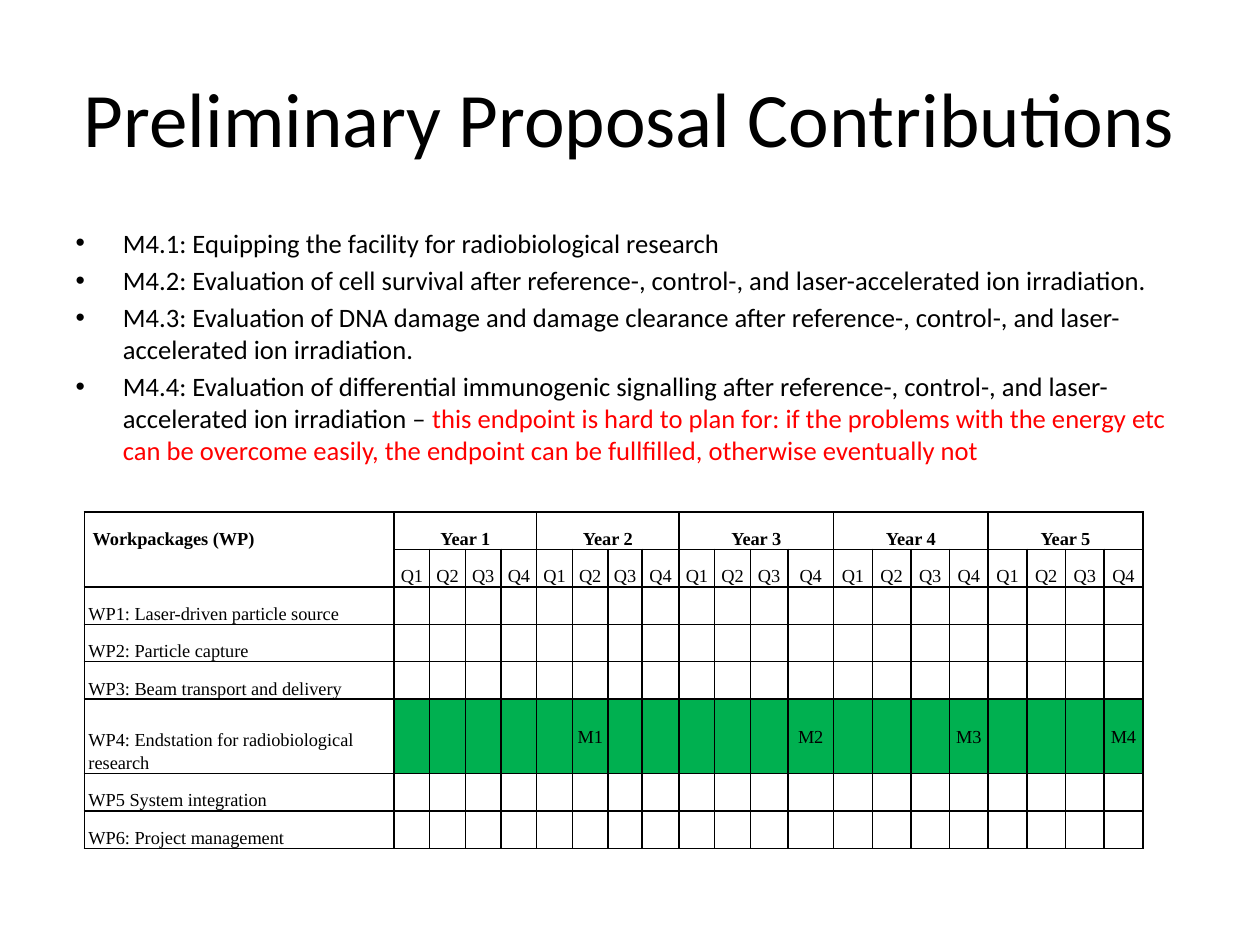
import dataclasses

import pptx
import pptx.dml.color
import pptx.enum.text
import pptx.oxml
import pptx.oxml.ns
import pptx.util
from pptx.util import Pt

Align = pptx.enum.text.PP_ALIGN
Anchor = pptx.enum.text.MSO_ANCHOR


@dataclasses.dataclass(frozen=True)
class Theme:
    """Colours, fonts and type sizes of the slide."""
    ink: str = "000000"
    warning: str = "FF0000"
    active: str = "00B050"
    text_font: str = "Calibri"
    plan_font: str = "Times New Roman"
    title_size: float = 44
    list_size: float = 15.2
    plan_size: float = 10.5
    rule_width: float = 1


THEME = Theme()

MILESTONES = [
    ["M4.1: Equipping the facility for radiobiological research"],
    ["M4.2: Evaluation of cell survival after reference-, control-, and "
     "laser-accelerated ion irradiation."],
    ["M4.3: Evaluation of DNA damage and damage clearance after reference-, control-, "
     "and laser-accelerated ion irradiation."],
    ["M4.4: Evaluation of differential immunogenic signalling after reference-, control-, "
     "and laser-accelerated ion irradiation – ",
     "this endpoint is hard to plan for: if the problems with the energy etc can be overcome "
     "easily, the endpoint can be fullfilled, otherwise eventually not"],
]
WORKPACKAGES = [
    "WP1: Laser-driven particle source",
    "WP2: Particle capture",
    "WP3: Beam transport and delivery",
    "WP4: Endstation for radiobiological research",
    "WP5 System integration",
    "WP6: Project management",
]
ACTIVE_ROW = 5
MILESTONE_COLUMNS = {6: "M1", 12: "M2", 16: "M3", 20: "M4"}
YEARS = 5
QUARTERS = 4
SPARE_COLUMN = 1 + YEARS * QUARTERS
COLUMN_WIDTHS = ([177] + [20.4] * 6 + [19.4, 21.2] + [20.4, 20.4, 21.4, 26.2]
                 + [22.1] * 8 + [25.8] * 2)
ROW_HEIGHTS = [21.4] * 5 + [42.6] + [21.4] * 2


def style_font(font, face, size, color, bold=False):
    """Set face, size, colour and weight of a font."""
    font.name = face
    font.size = Pt(size)
    font.bold = bold
    font.color.rgb = pptx.dml.color.RGBColor.from_string(color)


def place(part, box):
    """Move a placeholder to a box of left, top, width and height in points."""
    part.left, part.top, part.width, part.height = map(Pt, box)
    part.text_frame.auto_size = pptx.enum.text.MSO_AUTO_SIZE.NONE


def fill_title(title, box):
    """Write the slide title in its box."""
    place(title, box)
    title.text_frame.text = "Preliminary Proposal Contributions"
    title.text_frame.vertical_anchor = Anchor.MIDDLE
    heading = title.text_frame.paragraphs[0]
    heading.alignment = Align.CENTER
    style_font(heading.runs[0].font, THEME.text_font, THEME.title_size, THEME.ink)


def fill_milestones(body, box):
    """Write the milestone list, with the remark in the warning colour."""
    place(body, box)
    body.text_frame.text = "\n".join(parts[0] for parts in MILESTONES)
    for milestone, parts in zip(body.text_frame.paragraphs, MILESTONES):
        for remark in parts[1:]:
            milestone.add_run().text = remark
        for run, color in zip(milestone.runs, (THEME.ink, THEME.warning)):
            style_font(run.font, THEME.text_font, THEME.list_size, color)


def rule_cell(cell, sides):
    """Draw the cell borders named in sides and clear the others."""
    properties = cell._tc.get_or_add_tcPr()
    for side in "LRTB":
        line = pptx.oxml.parse_xml(
            f'<a:ln{side} {pptx.oxml.ns.nsdecls("a")} w="{Pt(THEME.rule_width)}">'
            + (f'<a:solidFill><a:srgbClr val="{THEME.ink}"/></a:solidFill>'
               if side in sides else "<a:noFill/>")
            + f"</a:ln{side}>")
        properties.append(line)


def cell_sides(row, column):
    """Return the sides of a plan cell that carry a border."""
    if column >= SPARE_COLUMN:
        return "L" if column == SPARE_COLUMN else ""
    if column == 0 and row < 2:
        return ("LRT", "LRB")[row]
    return "LRTB"


def cell_text(row, column):
    """Return the wording of a plan cell."""
    if column == 0:
        return [" Workpackages (WP)", "", *WORKPACKAGES][row]
    if column >= SPARE_COLUMN:
        return ""
    year, quarter = divmod(column - 1, QUARTERS)
    if row == 0:
        return f"Year {year + 1}" if quarter == 0 else ""
    if row == 1:
        return f"Q{quarter + 1}"
    return MILESTONE_COLUMNS.get(column, "") if row == ACTIVE_ROW else ""


def fill_cell(cell, row, column):
    """Write, rule and colour one plan cell."""
    scheduled = row == ACTIVE_ROW and 0 < column < SPARE_COLUMN
    cell.margin_left = cell.margin_right = Pt(2.4)
    cell.margin_top = cell.margin_bottom = 0
    cell.vertical_anchor = Anchor.MIDDLE if scheduled else Anchor.BOTTOM
    cell.text_frame.text = cell_text(row, column)
    entry = cell.text_frame.paragraphs[0]
    entry.alignment = Align.CENTER if column else Align.LEFT
    entry.line_spacing = 1.15
    for run in entry.runs:
        style_font(run.font, THEME.plan_font, THEME.plan_size, THEME.ink, row == 0)
    if not entry.runs:
        entry._p.append(pptx.oxml.parse_xml(
            f'<a:endParaRPr {pptx.oxml.ns.nsdecls("a")} sz="{int(THEME.plan_size * 100)}"/>'))
    rule_cell(cell, cell_sides(row, column))
    if scheduled:
        cell.fill.solid()
        cell.fill.fore_color.rgb = pptx.dml.color.RGBColor.from_string(THEME.active)
    else:
        cell.fill.background()


def add_plan(slide, left, top):
    """Add the five-year work plan with its top left corner at the given point."""
    plan = slide.shapes.add_table(
        len(ROW_HEIGHTS), len(COLUMN_WIDTHS), Pt(left), Pt(top),
        Pt(sum(COLUMN_WIDTHS)), Pt(sum(ROW_HEIGHTS))).table
    plan.first_row = plan.horz_banding = False
    for column, width in zip(plan.columns, COLUMN_WIDTHS):
        column.width = Pt(width)
    for row, height in enumerate(ROW_HEIGHTS):
        plan.rows[row].height = Pt(height)
        for column in range(len(COLUMN_WIDTHS)):
            fill_cell(plan.cell(row, column), row, column)
        if row != 1:
            plan.cell(row, SPARE_COLUMN).merge(plan.cell(row, SPARE_COLUMN + 1))
    for start in range(1, SPARE_COLUMN, QUARTERS):
        plan.cell(0, start).merge(plan.cell(0, start + QUARTERS - 1))


def main():
    """Build the slide and save it."""
    deck = pptx.Presentation()
    deck.slide_width, deck.slide_height = Pt(720), Pt(540)
    slide = deck.slides.add_slide(deck.slide_layouts[1])
    fill_title(slide.shapes.title, (36, 21.6, 648, 90))
    fill_milestones(slide.placeholders[1], (36, 126, 648, 155.5))
    add_plan(slide, 48.2, 292.6)
    deck.save("out.pptx")


if __name__ == "__main__":
    main()
